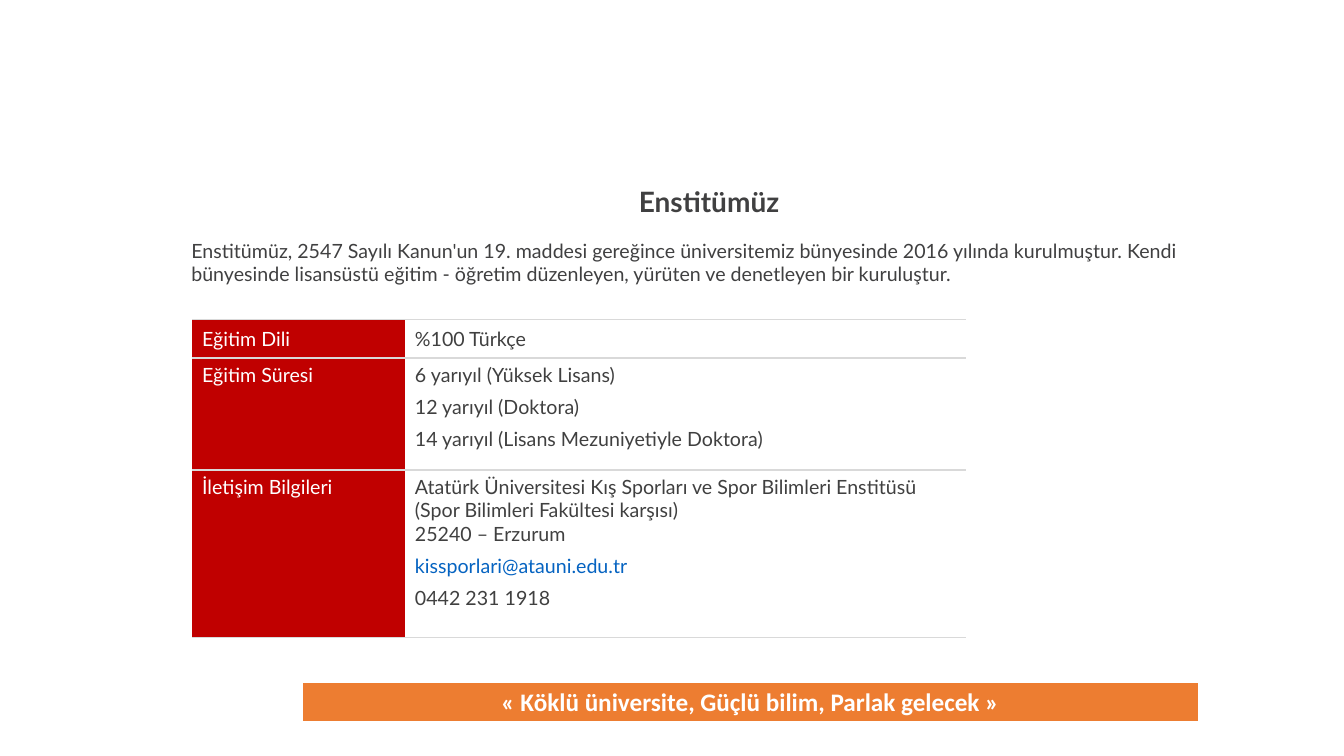
"""Build the institute slide: heading, introduction, facts table and motto bar."""
from dataclasses import dataclass

from lxml import etree
from pptx import Presentation
from pptx.dml.color import RGBColor
from pptx.enum.text import MSO_ANCHOR, PP_ALIGN
from pptx.oxml.ns import qn
from pptx.util import Pt

LEFT, CENTER = PP_ALIGN.LEFT, PP_ALIGN.CENTER
TOP, MIDDLE = MSO_ANCHOR.TOP, MSO_ANCHOR.MIDDLE
HUES = {
    "ink": "404041", "gray": "404040", "white": "FFFFFF", "red": "C00000",
    "blue": "0563C1", "rule": "D9D9D9", "orange": "ED7D31",
}


@dataclass(frozen=True)
class Line:
    text: str
    hue: str = "gray"
    size: float = 14
    bold: bool = False
    font: str = "Lato"
    align: PP_ALIGN = LEFT
    gap: float = 0


@dataclass(frozen=True)
class Box:
    x: float
    y: float
    w: float
    h: float


@dataclass(frozen=True)
class Cell:
    lines: tuple[Line, ...]
    fill: str = ""
    anchor: MSO_ANCHOR = TOP


@dataclass(frozen=True)
class Edge:
    side: str
    hue: str = ""
    width: float = 1


@dataclass(frozen=True)
class Grid:
    box: Box
    cols: tuple[float, ...]
    rows: tuple[float, ...]
    cells: tuple[tuple[Cell, ...], ...]
    edges: tuple[Edge, ...]


def label(text: str, anchor: MSO_ANCHOR = TOP) -> Cell:
    """Return a red row label."""
    return Cell((Line(text, "white"),), "red", anchor)


def color(hue: str) -> RGBColor:
    """Return the named colour."""
    return RGBColor.from_string(HUES[hue])


def write(frame, lines: tuple[Line, ...]) -> None:
    """Fill a text frame with one paragraph per line."""
    for i, line in enumerate(lines):
        para = frame.add_paragraph() if i else frame.paragraphs[0]
        para.alignment = line.align
        if line.gap:
            para.space_before = Pt(line.gap)
        run = para.add_run()
        run.text = line.text
        font = run.font
        font.name, font.size, font.bold = line.font, Pt(line.size), line.bold
        font.color.rgb = color(line.hue)


def add_text(slide, box: Box, line: Line, anchor: MSO_ANCHOR) -> None:
    """Add a wrapped text box."""
    shape = slide.shapes.add_textbox(Pt(box.x), Pt(box.y), Pt(box.w), Pt(box.h))
    frame = shape.text_frame
    frame.word_wrap = True
    frame.vertical_anchor = anchor
    write(frame, (line,))


def add_edge(cell, edge: Edge) -> None:
    """Draw or clear one border of a cell."""
    props = cell._tc.get_or_add_tcPr()
    ln = etree.SubElement(props, qn("a:ln" + edge.side), w=str(Pt(edge.width)))
    if edge.hue:
        fill = etree.SubElement(ln, qn("a:solidFill"))
        etree.SubElement(fill, qn("a:srgbClr"), val=HUES[edge.hue])
    else:
        etree.SubElement(ln, qn("a:noFill"))


def add_grid(slide, grid: Grid) -> None:
    """Add a table with its borders, fills and text."""
    box = grid.box
    table = slide.shapes.add_table(
        len(grid.rows), len(grid.cols), Pt(box.x), Pt(box.y), Pt(box.w), Pt(box.h)
    ).table
    table.first_row = table.horz_banding = False
    for col, width in zip(table.columns, grid.cols):
        col.width = Pt(width)
    for row, height, cells in zip(table.rows, grid.rows, grid.cells):
        row.height = Pt(height)
        for cell, data in zip(row.cells, cells):
            for edge in grid.edges:
                add_edge(cell, edge)
            if data.fill:
                cell.fill.solid()
                cell.fill.fore_color.rgb = color(data.fill)
            else:
                cell.fill.background()
            cell.vertical_anchor = data.anchor
            write(cell.text_frame, data.lines)


TITLE = Line("Enstitümüz", "ink", 20, True, align=CENTER)
INTRO = Line(
    "Enstitümüz, 2547 Sayılı Kanun'un 19. maddesi gereğince üniversitemiz "
    "bünyesinde 2016 yılında kurulmuştur. Kendi bünyesinde lisansüstü eğitim - "
    "öğretim düzenleyen, yürüten ve denetleyen bir kuruluştur.",
    "ink",
)
TERMS = Cell((
    Line("6 yarıyıl (Yüksek Lisans)"),
    Line("12 yarıyıl (Doktora)", gap=6),
    Line("14 yarıyıl (Lisans Mezuniyetiyle Doktora)", gap=6),
))
CONTACT = Cell((
    Line("Atatürk Üniversitesi Kış Sporları ve Spor Bilimleri Enstitüsü"),
    Line("(Spor Bilimleri Fakültesi karşısı)"),
    Line("25240 – Erzurum"),
    Line("kissporlari@atauni.edu.tr", "blue", gap=6),
    Line("0442 231 1918", gap=6),
))
FACTS = Grid(
    Box(137.2, 228.4, 553, 226.8), (152, 401), (27.4, 79.9, 119.5),
    (
        (label("Eğitim Dili", MIDDLE), Cell((Line("%100 Türkçe"),), anchor=MIDDLE)),
        (label("Eğitim Süresi"), TERMS),
        (label("İletişim Bilgileri"), CONTACT),
    ),
    (Edge("L"), Edge("R"), Edge("T", "rule"), Edge("B", "rule")),
)
MOTTO = Line(
    "« Köklü üniversite, Güçlü bilim, Parlak gelecek »",
    "white", 18, True, "Calibri", CENTER,
)
BAR = Grid(
    Box(216, 487.4, 640, 29.2), (640,), (29.2,),
    ((Cell((MOTTO,), "orange"),),),
    (*(Edge(side, "white") for side in "LRT"), Edge("B", "white", 3)),
)


def main() -> None:
    """Build and save the slide."""
    deck = Presentation()
    deck.slide_width, deck.slide_height = Pt(960), Pt(540)
    slide = deck.slides.add_slide(deck.slide_layouts[6])
    add_text(slide, Box(129.6, 121, 753.8, 46), TITLE, MIDDLE)
    add_text(slide, Box(129.6, 167, 753.8, 82.8), INTRO, TOP)
    add_grid(slide, FACTS)
    add_grid(slide, BAR)
    deck.save("out.pptx")


if __name__ == "__main__":
    main()
